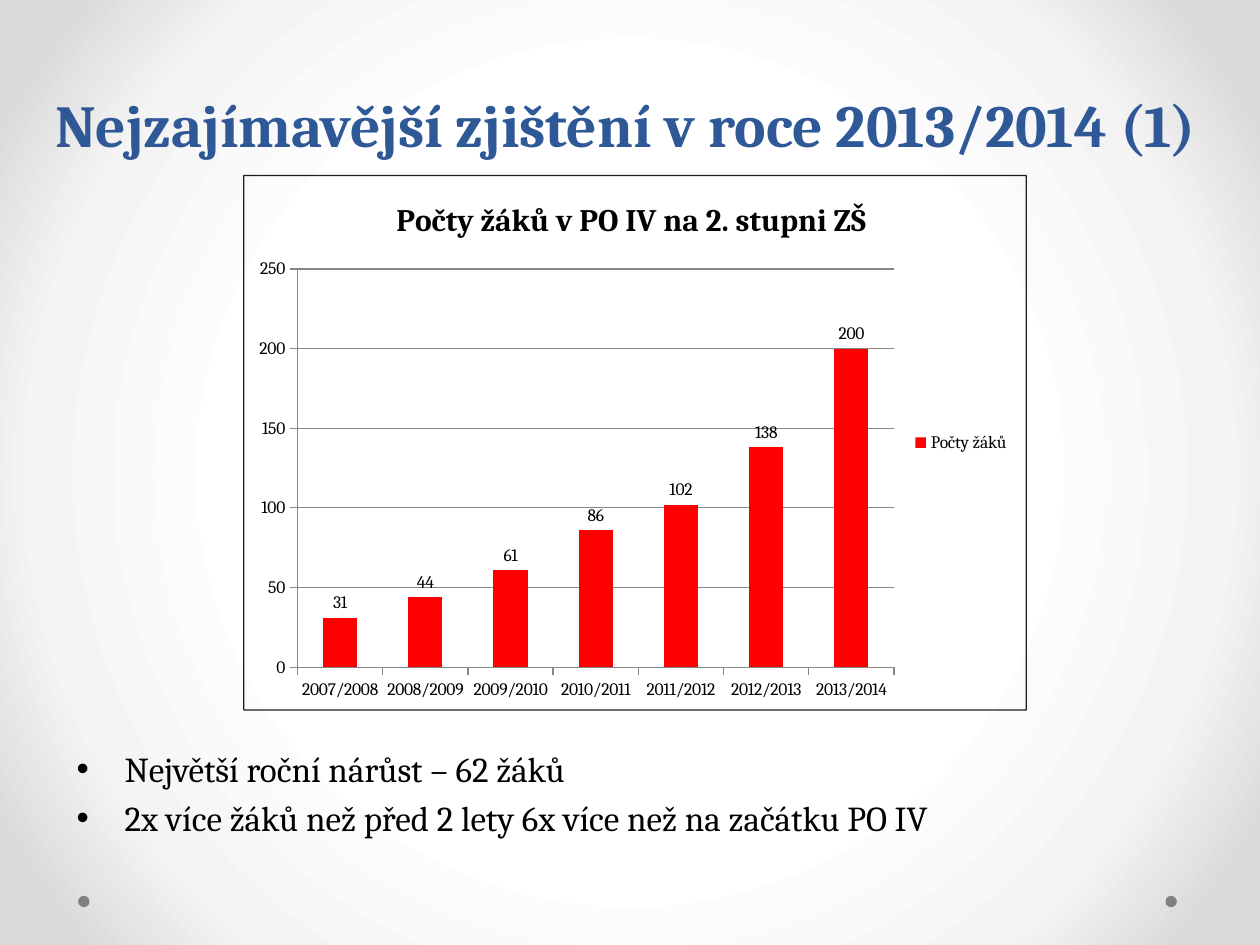
from lxml.etree import SubElement
from pptx import Presentation
from pptx.chart.data import CategoryChartData
from pptx.dml.color import RGBColor
from pptx.enum.chart import XL_CHART_TYPE, XL_LABEL_POSITION, XL_LEGEND_POSITION, XL_TICK_MARK
from pptx.enum.shapes import MSO_SHAPE
from pptx.enum.text import MSO_ANCHOR, PP_ALIGN
from pptx.oxml import parse_xml
from pptx.oxml.ns import nsdecls, qn
from pptx.util import Inches, Pt

TITLE = "Nejzajímavější zjištění v roce 2013/2014 (1)"
FINDINGS = [
    "Největší roční nárůst – 62 žáků",
    "2x více žáků než před 2 lety 6x více než na začátku PO IV",
]
CHART_TITLE = "Počty žáků v PO IV na 2. stupni ZŠ "
SERIES_NAME = "Počty žáků "
PUPILS = {
    "2007/2008": 31,
    "2008/2009": 44,
    "2009/2010": 61,
    "2010/2011": 86,
    "2011/2012": 102,
    "2012/2013": 138,
    "2013/2014": 200,
}
THEME = {
    "font": "Cambria",
    "title": "2F5897",
    "text": "000000",
    "bar": "FF0000",
    "grid": "868686",
    "dot": "808080",
    "background": [(50, "FFFFFF"), (76, "F4F4F4"), (92, "DADADA")],
    "title_size": 34,
    "body_size": 20,
    "chart_title_size": 18,
    "chart_size": 10,
}
WIDTH, HEIGHT = 10, 7.5
TITLE_BOX = (0.02, 0.07, 0.953, 0.105)
CHART_BOX = (0.193, 0.185, 0.622, 0.567)
BODY_BOX = (0.051, 0.784, 0.898, 0.136)
DOT_SIZE = 0.09
DOT_TOP = 0.948
DOT_LEFTS = (0.062, 0.925)


def place(left, top, width, height):
    return [Inches(share * side) for share, side in
            zip((left, top, width, height), (WIDTH, HEIGHT) * 2)]


def format_font(font, size, color, bold=False):
    font.name = THEME["font"]
    font.size = Pt(size)
    font.bold = bold
    font.color.rgb = RGBColor.from_string(color)


def add_text(slide, box, lines, *, size, color, bold=False, align=PP_ALIGN.LEFT,
             anchor=MSO_ANCHOR.TOP, line_spacing=None, space_before=0, bullet_indent=0):
    frame = slide.shapes.add_textbox(*place(*box)).text_frame
    frame.word_wrap = True
    frame.vertical_anchor = anchor
    for index, line in enumerate(lines):
        paragraph = frame.paragraphs[0] if index == 0 else frame.add_paragraph()
        paragraph.alignment = align
        paragraph.space_before = Pt(space_before)
        if line_spacing:
            paragraph.line_spacing = Pt(line_spacing)
        run = paragraph.add_run()
        run.text = line
        format_font(run.font, size, color, bold)
        if bullet_indent:
            properties = paragraph._p.get_or_add_pPr()
            properties.set("marL", str(Inches(bullet_indent)))
            properties.set("indent", str(-Inches(bullet_indent)))
            SubElement(properties, qn("a:buFont"), typeface="Arial")
            SubElement(properties, qn("a:buChar"), char="•")


def paint_background(slide):
    slide.background.fill.gradient()
    gradient = slide.element.find(".//" + qn("a:gradFill"))
    for child in list(gradient):
        gradient.remove(child)
    stops = SubElement(gradient, qn("a:gsLst"))
    for position, color in THEME["background"]:
        stop = SubElement(stops, qn("a:gs"), pos=str(position * 1000))
        SubElement(stop, qn("a:srgbClr"), val=color)
    circle = SubElement(gradient, qn("a:path"), path="circle")
    SubElement(circle, qn("a:fillToRect"), dict.fromkeys("ltrb", "50000"))


def add_dots(slide):
    for left in DOT_LEFTS:
        dot = slide.shapes.add_shape(
            MSO_SHAPE.OVAL, *place(left, DOT_TOP, DOT_SIZE / WIDTH, DOT_SIZE / HEIGHT))
        dot.shadow.inherit = False
        dot.fill.solid()
        dot.fill.fore_color.rgb = RGBColor.from_string(THEME["dot"])
        dot.line.fill.background()


def add_pupil_chart(slide):
    data = CategoryChartData()
    data.categories = list(PUPILS)
    data.add_series(SERIES_NAME, list(PUPILS.values()))
    chart = slide.shapes.add_chart(
        XL_CHART_TYPE.COLUMN_CLUSTERED, *place(*CHART_BOX), data).chart
    format_font(chart.font, THEME["chart_size"], THEME["text"])

    chart.has_title = True
    chart.chart_title.include_in_layout = False
    title = chart.chart_title.text_frame.paragraphs[0].add_run()
    title.text = CHART_TITLE
    format_font(title.font, THEME["chart_title_size"], THEME["text"], bold=True)

    chart.has_legend = True
    chart.legend.position = XL_LEGEND_POSITION.RIGHT
    chart.legend.include_in_layout = False

    grid_color = RGBColor.from_string(THEME["grid"])
    value_axis = chart.value_axis
    value_axis.minimum_scale, value_axis.maximum_scale, value_axis.major_unit = 0, 250, 50
    value_axis.has_major_gridlines = True
    for axis in (chart.category_axis, value_axis):
        axis.major_tick_mark = XL_TICK_MARK.OUTSIDE
    for line in (chart.category_axis.format.line, value_axis.format.line,
                 value_axis.major_gridlines.format.line):
        line.color.rgb = grid_color
        line.width = Pt(0.75)

    plot = chart.plots[0]
    plot.gap_width = 150
    plot.vary_by_categories = False
    series = plot.series[0]
    series.format.fill.solid()
    series.format.fill.fore_color.rgb = RGBColor.from_string(THEME["bar"])
    labels = series.data_labels
    labels.show_value = True
    labels.position = XL_LABEL_POSITION.OUTSIDE_END

    border = parse_xml(
        f'<c:spPr {nsdecls("c", "a")}><a:noFill/><a:ln w="{Pt(0.75)}"><a:solidFill>'
        f'<a:srgbClr val="{THEME["text"]}"><a:alpha val="87000"/></a:srgbClr>'
        '</a:solidFill></a:ln></c:spPr>')
    chart.element.find(qn("c:txPr")).addprevious(border)


def main():
    presentation = Presentation()
    presentation.slide_width, presentation.slide_height = Inches(WIDTH), Inches(HEIGHT)
    slide = presentation.slides.add_slide(presentation.slide_layouts[6])
    paint_background(slide)
    add_dots(slide)
    add_text(slide, TITLE_BOX, [TITLE], size=THEME["title_size"], color=THEME["title"],
             bold=True, align=PP_ALIGN.CENTER, anchor=MSO_ANCHOR.BOTTOM, line_spacing=58)
    add_text(slide, BODY_BOX, FINDINGS, size=THEME["body_size"], color=THEME["text"],
             space_before=4, bullet_indent=0.38)
    add_pupil_chart(slide)
    presentation.save("out.pptx")


if __name__ == "__main__":
    main()
